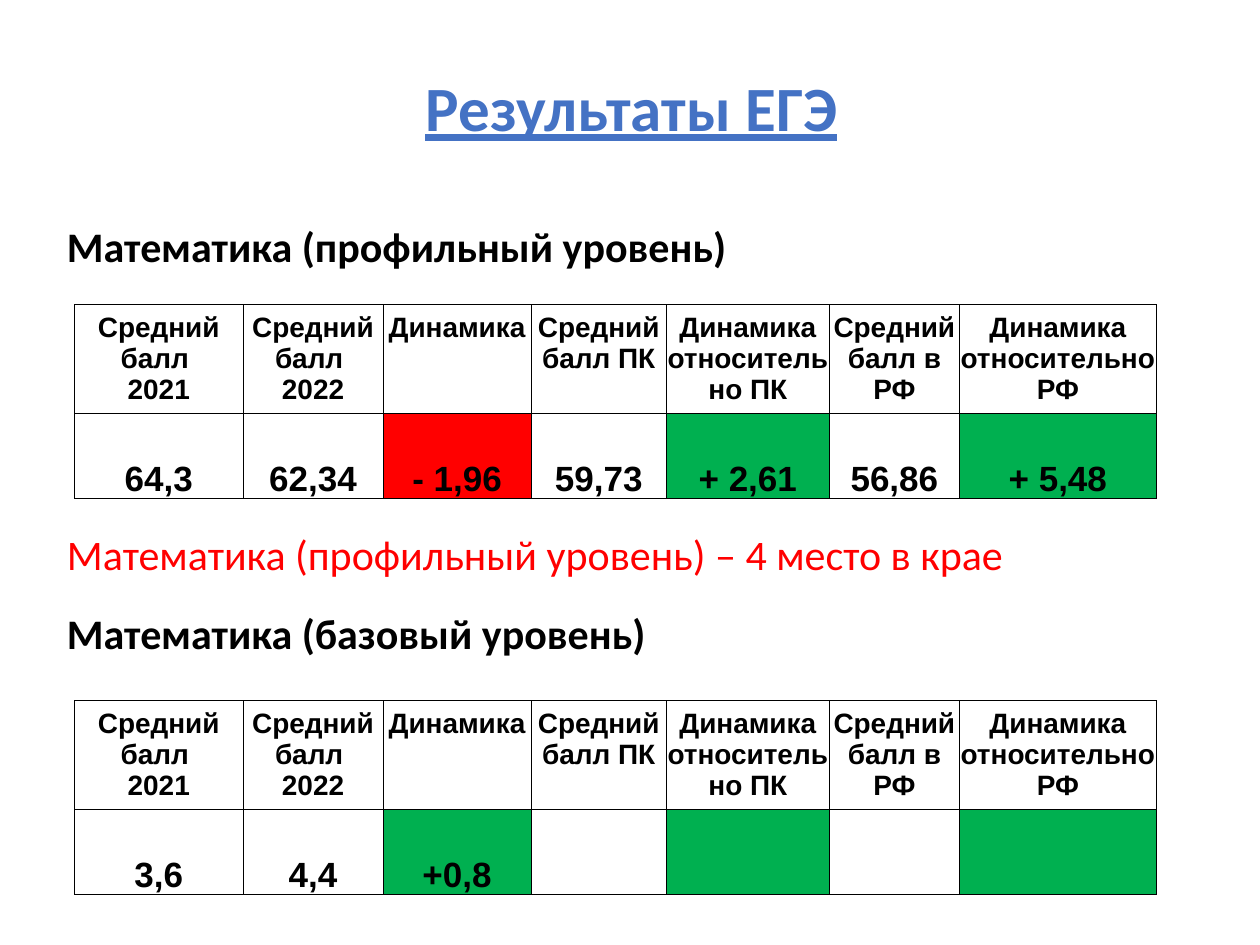
import dataclasses
from typing import Optional

import lxml.etree
import pptx
import pptx.dml.color
import pptx.enum.text
import pptx.oxml.ns
import pptx.slide
import pptx.table
import pptx.util
from pptx.util import Cm, Pt


@dataclasses.dataclass(frozen=True)
class Theme:
    heading_font: str = "Calibri"
    table_font: str = "Arial"
    title_size: int = 36
    label_size: int = 24
    header_size: int = 16
    value_size: int = 20
    border_width: float = 0.5
    accent: str = "4472C4"
    ink: str = "000000"
    paper: str = "FFFFFF"
    decline: str = "FF0000"
    growth: str = "00B050"


THEME = Theme()


@dataclasses.dataclass(frozen=True)
class Label:
    text: str
    left: float
    top: float
    width: float
    height: float
    color: str = THEME.ink
    size: int = THEME.label_size
    bold: bool = True
    is_title: bool = False


@dataclasses.dataclass(frozen=True)
class Score:
    text: str = ""
    fill: str = THEME.paper


@dataclasses.dataclass(frozen=True)
class ScoreTable:
    top: float
    scores: tuple[Score, ...]


TABLE_LEFT = 1.5
COLUMN_WIDTHS = (3.4, 2.82, 2.99, 2.72, 3.29, 2.62, 3.97)
ROW_HEIGHTS = (2.06, 1.72)
HEADERS = (
    "Средний балл \n2021",
    "Средний балл \n2022",
    "Динамика",
    "Средний балл ПК",
    "Динамика относительно ПК",
    "Средний балл в РФ",
    "Динамика относительно РФ",
)

LABELS = (
    Label("Результаты ЕГЭ", 5.9, 1.25, 13.66, 3.33, THEME.accent,
          THEME.title_size, is_title=True),
    Label("Математика (профильный уровень)", 1.1, 4.32, 13.94, 1.28),
    Label("Математика (профильный уровень) – 4 место в крае",
          1.1, 10.52, 19.76, 1.28, THEME.decline, bold=False),
    Label("Математика (базовый уровень)", 1.1, 12.12, 12.32, 1.28),
)

TABLES = (
    ScoreTable(6.14, (
        Score("64,3"), Score("62,34"), Score("- 1,96", THEME.decline),
        Score("59,73"), Score("+ 2,61", THEME.growth),
        Score("56,86"), Score("+ 5,48", THEME.growth),
    )),
    ScoreTable(14.12, (
        Score("3,6"), Score("4,4"), Score("+0,8", THEME.growth),
        Score(), Score(fill=THEME.growth),
        Score(), Score(fill=THEME.growth),
    )),
)


def rgb(value: str) -> pptx.dml.color.RGBColor:
    return pptx.dml.color.RGBColor.from_string(value)


def style_paragraphs(frame, font: str, size: int, color: str, bold: bool,
                     alignment: Optional[pptx.enum.text.PP_ALIGN]) -> None:
    for paragraph in frame.paragraphs:
        paragraph.alignment = alignment
        paragraph.font.name = font
        paragraph.font.size = Pt(size)
        paragraph.font.bold = bold
        paragraph.font.color.rgb = rgb(color)


def draw_label(slide: pptx.slide.Slide, label: Label) -> None:
    box = slide.shapes.add_textbox(
        Cm(label.left), Cm(label.top), Cm(label.width), Cm(label.height))
    frame = box.text_frame
    frame.word_wrap = label.is_title
    frame.text = label.text
    alignment = pptx.enum.text.PP_ALIGN.CENTER if label.is_title else None
    style_paragraphs(frame, THEME.heading_font, label.size, label.color,
                     label.bold, alignment)
    if label.is_title:
        frame.paragraphs[0].font.underline = True


def draw_borders(cell: pptx.table._Cell) -> None:
    qn = pptx.oxml.ns.qn
    properties = cell._tc.get_or_add_tcPr()
    for side in ("a:lnL", "a:lnR", "a:lnT", "a:lnB"):
        line = lxml.etree.SubElement(
            properties, qn(side), w=str(Pt(THEME.border_width)))
        fill = lxml.etree.SubElement(line, qn("a:solidFill"))
        lxml.etree.SubElement(fill, qn("a:srgbClr"), val=THEME.ink)


def draw_cell(cell: pptx.table._Cell, text: str, size: int, fill: str,
              anchor: pptx.enum.text.MSO_ANCHOR, margin_top: float) -> None:
    draw_borders(cell)
    cell.fill.solid()
    cell.fill.fore_color.rgb = rgb(fill)
    cell.margin_left = cell.margin_right = Cm(0.02)
    cell.margin_top, cell.margin_bottom = Cm(margin_top), Cm(0)
    cell.vertical_anchor = anchor
    cell.text = text
    style_paragraphs(cell.text_frame, THEME.table_font, size, THEME.ink, True,
                     pptx.enum.text.PP_ALIGN.CENTER)


def draw_table(slide: pptx.slide.Slide, score_table: ScoreTable) -> None:
    grid = slide.shapes.add_table(
        len(ROW_HEIGHTS), len(COLUMN_WIDTHS), Cm(TABLE_LEFT),
        Cm(score_table.top), Cm(sum(COLUMN_WIDTHS)), Cm(sum(ROW_HEIGHTS))).table
    grid.first_row = False
    grid.horz_banding = False
    for row, height in zip(grid.rows, ROW_HEIGHTS):
        row.height = Cm(height)
    for column, width in zip(grid.columns, COLUMN_WIDTHS):
        column.width = Cm(width)
    anchors = pptx.enum.text.MSO_ANCHOR
    for index, (header, score) in enumerate(zip(HEADERS, score_table.scores)):
        draw_cell(grid.cell(0, index), header, THEME.header_size, THEME.paper,
                  anchors.TOP, 0.16)
        draw_cell(grid.cell(1, index), score.text, THEME.value_size, score.fill,
                  anchors.BOTTOM, 0.02)


def main() -> None:
    presentation = pptx.Presentation()
    presentation.slide_width = Cm(25.4)
    presentation.slide_height = Cm(19.05)
    slide = presentation.slides.add_slide(presentation.slide_layouts[6])
    for label in LABELS:
        draw_label(slide, label)
    for score_table in TABLES:
        draw_table(slide, score_table)
    presentation.save("out.pptx")


if __name__ == "__main__":
    main()
